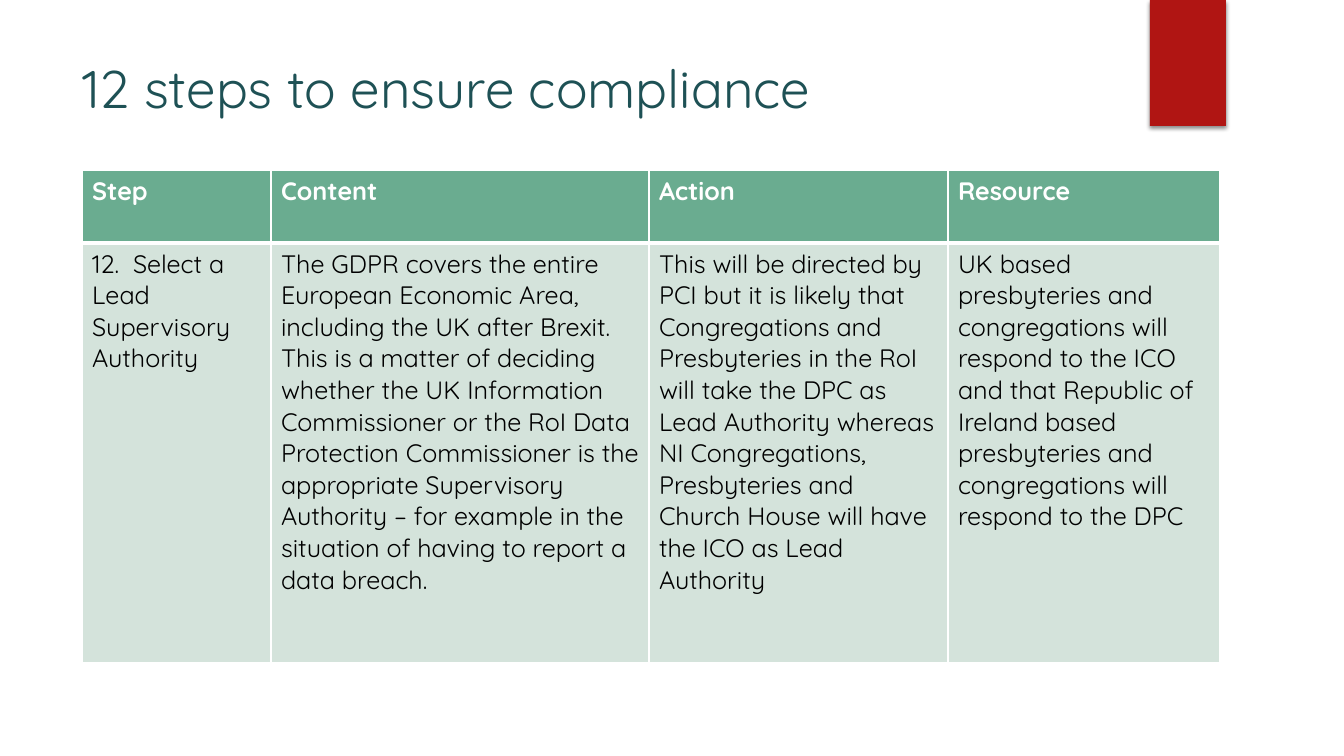
from lxml import etree
from pptx import Presentation
from pptx.dml.color import RGBColor
from pptx.enum.shapes import MSO_SHAPE
from pptx.enum.text import MSO_ANCHOR, PP_ALIGN
from pptx.oxml.ns import qn
from pptx.util import Pt

TITLE = "12 steps to ensure compliance"
ROWS = [
    ["Step", "Content", "Action", "Resource"],
    [
        "12.  Select a Lead Supervisory Authority",
        "The GDPR covers the entire European Economic Area, including the UK after Brexit.  "
        "This is a matter of deciding whether the UK Information Commissioner or the RoI Data "
        "Protection Commissioner is the appropriate Supervisory Authority – for example in the "
        "situation of having to report a data breach.",
        "This will be directed by PCI but it is likely that Congregations and Presbyteries in "
        "the RoI will take the DPC as Lead Authority whereas NI Congregations, Presbyteries and "
        "Church House will have the ICO as Lead Authority",
        "UK based presbyteries and congregations will respond to the ICO and that Republic of "
        "Ireland based presbyteries and congregations will respond to the DPC",
    ],
]
COLORS = {
    "title": "1E5155",
    "ribbon": "B01513",
    "header": "6AAC90",
    "body": "D4E3DB",
    "white": "FFFFFF",
    "black": "000000",
}
FONT = "Quicksand"
SLIDE_SIZE = (1344, 756)
TITLE_BOX = (72, 50, 1037, 75)
RIBBON_BOX = (1150, 0, 76, 126)
TABLE_ORIGIN = (82, 170)
COLUMN_WIDTHS = [189, 378, 299, 272]
ROW_HEIGHTS = [73, 420]
RECTANGLE = MSO_SHAPE.RECTANGLE
LEFT = PP_ALIGN.LEFT
TOP = MSO_ANCHOR.TOP
MIDDLE = MSO_ANCHOR.MIDDLE


def px(length):
    return round(length * 914400 / 100.8)


def rgb(name):
    return RGBColor.from_string(COLORS[name])


def style(para, size, color, bold=False):
    para.alignment = LEFT
    para.font.name = FONT
    para.font.size = Pt(size)
    para.font.bold = bold
    para.font.color.rgb = rgb(color)


def add_color(parent, name):
    fill = etree.SubElement(parent, qn("a:solidFill"))
    return etree.SubElement(fill, qn("a:srgbClr"), val=COLORS[name])


def add_title(page):
    box = page.shapes.title
    box.left, box.top, box.width, box.height = map(px, TITLE_BOX)
    frame = box.text_frame
    frame.text = TITLE
    frame.word_wrap = True
    frame.vertical_anchor = MIDDLE
    style(frame.paragraphs[0], 37.8, "title")


def add_ribbon(page):
    ribbon = page.shapes.add_shape(RECTANGLE, *map(px, RIBBON_BOX))
    ribbon.fill.solid()
    ribbon.fill.fore_color.rgb = rgb("ribbon")
    ribbon.line.fill.background()
    ribbon.shadow.inherit = False
    effects = ribbon._element.spPr.find(qn("a:effectLst"))
    shadow = etree.SubElement(
        effects, qn("a:outerShdw"), blurRad=str(Pt(3)), dist=str(Pt(2)),
        dir="5400000", rotWithShape="0",
    )
    color = etree.SubElement(shadow, qn("a:srgbClr"), val=COLORS["black"])
    etree.SubElement(color, qn("a:alpha"), val="45000")


def set_borders(cell, widths):
    properties = cell._tc.get_or_add_tcPr()
    for index, (side, width) in enumerate(widths.items()):
        line = etree.Element(qn("a:ln" + side), w=str(Pt(width)))
        add_color(line, "white")
        properties.insert(index, line)


def add_steps_table(page):
    left, top = map(px, TABLE_ORIGIN)
    table = page.shapes.add_table(
        len(ROWS), len(COLUMN_WIDTHS), left, top,
        px(sum(COLUMN_WIDTHS)), px(sum(ROW_HEIGHTS)),
    ).table
    for column, width in zip(table.columns, COLUMN_WIDTHS):
        column.width = px(width)
    for row, height, texts in zip(table.rows, ROW_HEIGHTS, ROWS):
        row.height = px(height)
        header = texts is ROWS[0]
        for cell, text in zip(row.cells, texts):
            cell.text = text
            cell.vertical_anchor = TOP
            cell.fill.solid()
            cell.fill.fore_color.rgb = rgb("header" if header else "body")
            style(cell.text_frame.paragraphs[0], 18, "white" if header else "black", header)
            set_borders(cell, {"L": 1, "R": 1, "T": 1 if header else 3, "B": 3 if header else 1})


def main():
    deck = Presentation()
    deck.slide_width, deck.slide_height = map(px, SLIDE_SIZE)
    page = deck.slides.add_slide(deck.slide_layouts[5])
    add_ribbon(page)
    add_title(page)
    add_steps_table(page)
    deck.save("out.pptx")


if __name__ == "__main__":
    main()
